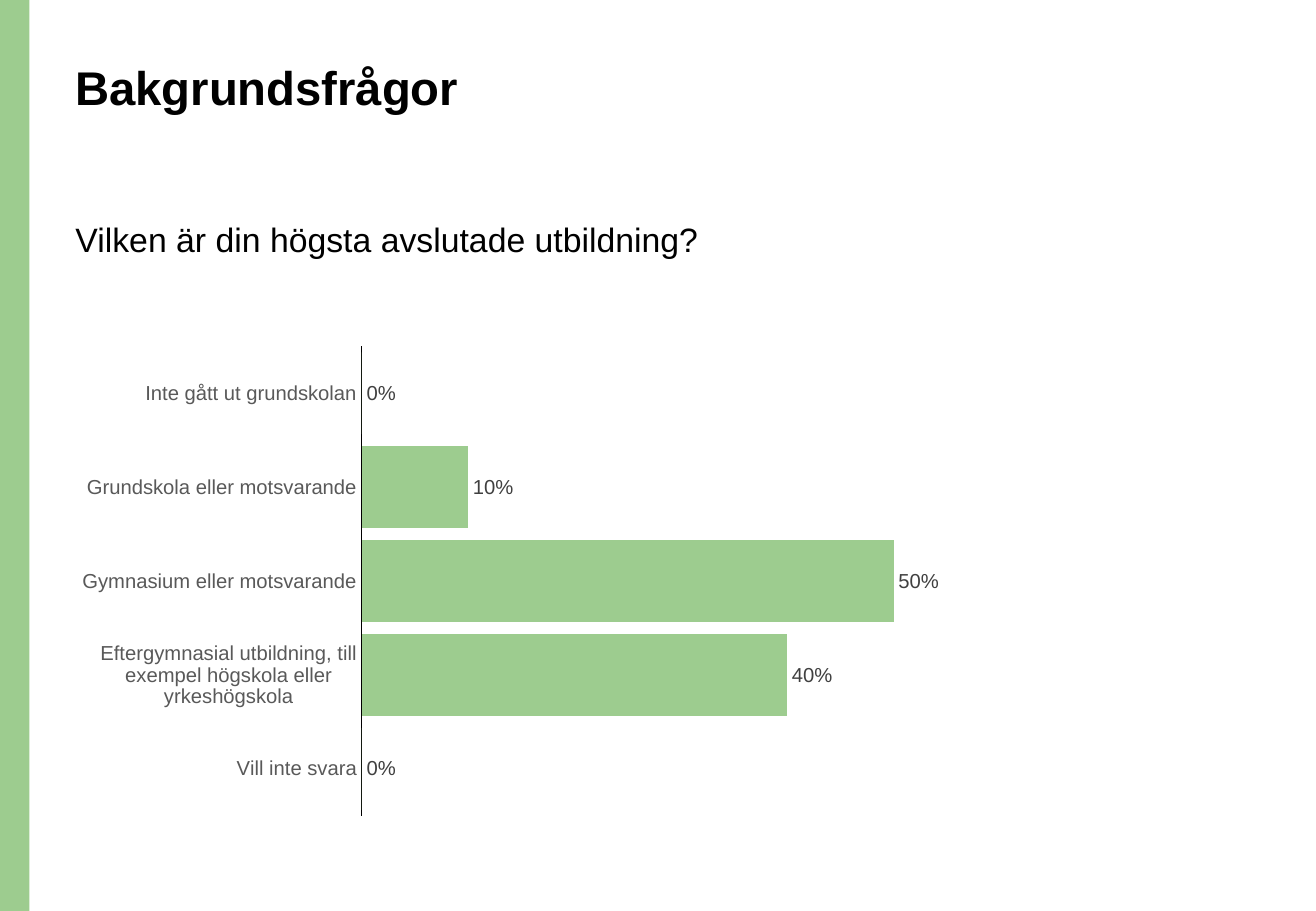
"""Build the slide on background questions with its education bar chart."""
from lxml import etree
from pptx import Presentation
from pptx.chart.data import CategoryChartData
from pptx.dml.color import RGBColor
from pptx.enum.chart import XL_CHART_TYPE as ChartType
from pptx.enum.chart import XL_LABEL_POSITION as LabelPosition
from pptx.enum.chart import XL_TICK_MARK as TickMark
from pptx.enum.shapes import MSO_SHAPE as Shape
from pptx.enum.text import MSO_ANCHOR as Anchor
from pptx.enum.text import MSO_AUTO_SIZE as AutoSize
from pptx.enum.text import PP_ALIGN as Align
from pptx.oxml.ns import qn
from pptx.util import Pt

GREEN = RGBColor(0x9D, 0xCC, 0x8F)
BLACK = RGBColor(0x00, 0x00, 0x00)
AXIS_GRAY = RGBColor(0x59, 0x59, 0x59)
LABEL_GRAY = RGBColor(0x40, 0x40, 0x40)
FONT = "Arial"
LEFT = 37.5

EDUCATION = {
    "Inte gått ut grundskolan": 0,
    "Grundskola eller motsvarande": 0.1,
    "Gymnasium eller motsvarande": 0.5,
    "Eftergymnasial utbildning, till exempel högskola eller yrkeshögskola": 0.4,
    "Vill inte svara": 0,
}


def style_font(font, size, color, bold=False):
    font.name = FONT
    font.size = Pt(size)
    font.bold = bold
    font.color.rgb = color


def write_text(shape, text, *, top, width, height, size, bold=False):
    shape.left, shape.top = Pt(LEFT), Pt(top)
    shape.width, shape.height = Pt(width), Pt(height)
    frame = shape.text_frame
    frame.text = text
    frame.word_wrap = True
    frame.auto_size = AutoSize.NONE
    frame.vertical_anchor = Anchor.TOP
    paragraph = frame.paragraphs[0]
    properties = paragraph._p.get_or_add_pPr()
    properties.set("marL", "0")
    properties.set("indent", "0")
    etree.SubElement(properties, qn("a:buNone"))
    paragraph.alignment = Align.LEFT
    paragraph.line_spacing = 0.9
    paragraph.space_before = Pt(0)
    style_font(paragraph.runs[0].font, size, BLACK, bold)


presentation = Presentation()
presentation.slide_width = Pt(780)
presentation.slide_height = Pt(540)
slide = presentation.slides.add_slide(presentation.slide_layouts[1])

side_band = slide.shapes.add_shape(Shape.RECTANGLE, Pt(0), Pt(0), Pt(17.5), Pt(540))
side_band.shadow.inherit = False
side_band.fill.solid()
side_band.fill.fore_color.rgb = GREEN
side_band.line.fill.background()

write_text(slide.shapes.title, "Bakgrundsfrågor",
           top=34.5, width=672.5, height=73.5, size=28, bold=True)
write_text(slide.placeholders[1], "Vilken är din högsta avslutade utbildning?",
           top=129, width=434, height=53.5, size=20)

chart_data = CategoryChartData(number_format="0%")
chart_data.categories = list(EDUCATION)
chart_data.add_series("Series 1", list(EDUCATION.values()))
chart = slide.shapes.add_chart(ChartType.BAR_CLUSTERED, Pt(LEFT), Pt(199.5),
                               Pt(566.5), Pt(290), chart_data).chart
chart.has_legend = False
chart.has_title = False
style_font(chart.font, 10, BLACK)

category_axis = chart.category_axis
category_axis.reverse_order = True
category_axis.major_tick_mark = TickMark.NONE
category_axis.minor_tick_mark = TickMark.NONE
category_axis.format.line.color.rgb = BLACK
category_axis.format.line.width = Pt(0.75)
style_font(category_axis.tick_labels.font, 12, AXIS_GRAY)

value_axis = chart.value_axis
value_axis.minimum_scale = 0
value_axis.maximum_scale = 0.6
value_axis.has_major_gridlines = False
value_axis.visible = False

plot = chart.plots[0]
plot.gap_width = 15
plot.vary_by_categories = False
series = plot.series[0]
series.format.fill.solid()
series.format.fill.fore_color.rgb = GREEN

labels = series.data_labels
labels.show_value = True
labels.number_format = "0%"
labels.number_format_is_linked = False
labels.position = LabelPosition.OUTSIDE_END
style_font(labels.font, 12, LABEL_GRAY)

presentation.save("out.pptx")
